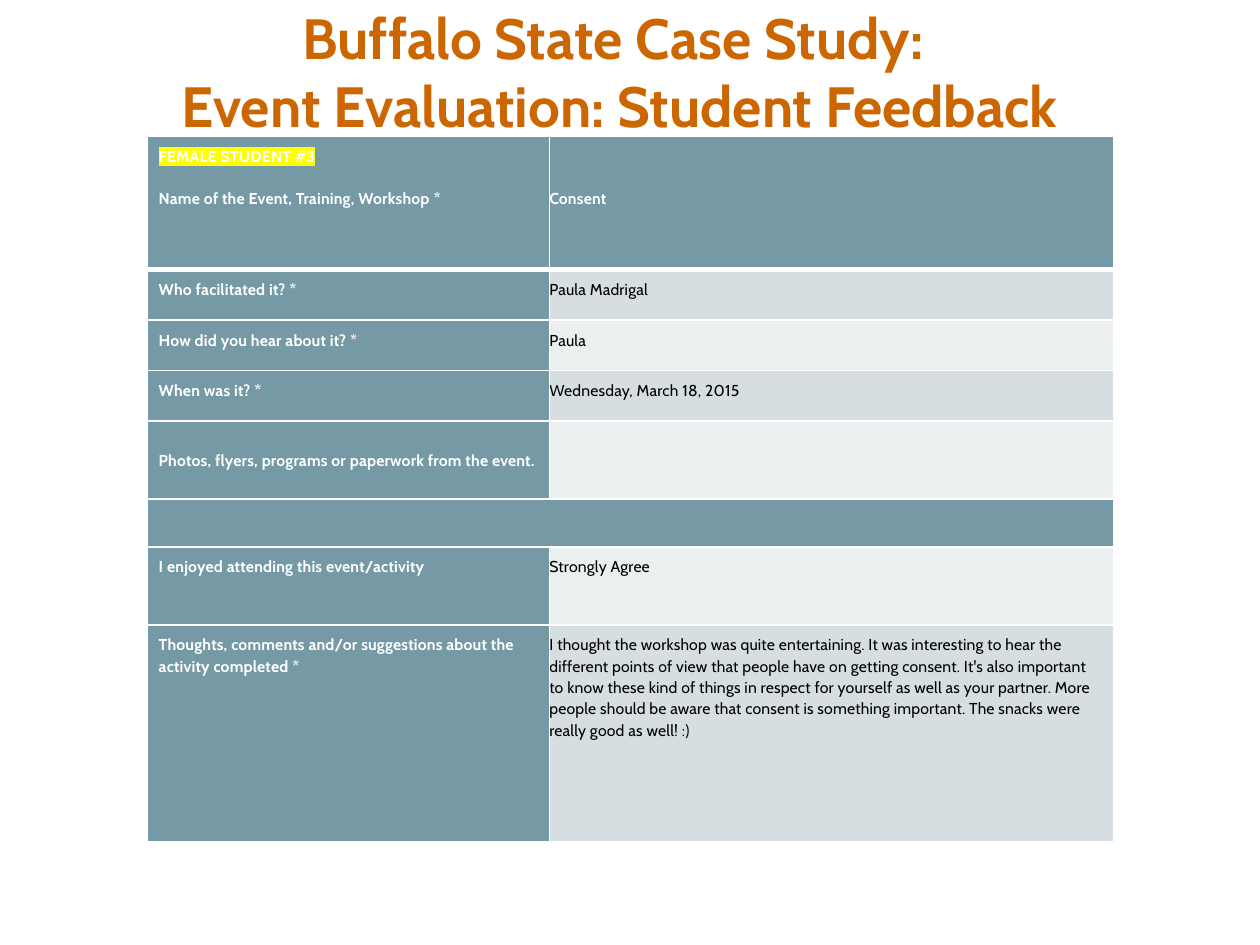
from lxml import etree
from pptx import Presentation
from pptx import util as u
from pptx.dml.color import RGBColor
from pptx.enum import text
from pptx.oxml import ns

COLORS = {
    "title": "CC6600",
    "label": "759AA5",
    "odd": "D6DEE1",
    "even": "ECEFF0",
    "white": "FFFFFF",
    "answer": "000000",
    "marker": "FFFF00",
}
FONT = "Cabin"
LINE = 12.2
HEADING = "Buffalo State Case Study: \vEvent Evaluation: Student Feedback"
COLUMN_WIDTHS = [3.19, 4.48]
FEEDBACK = [
    (1.06, "FEMALE STUDENT #3\nName of the Event, Training, Workshop\u00a0*", "Consent"),
    (0.4, "Who facilitated it?\u00a0*", "Paula Madrigal"),
    (0.4, "How did you hear about it?\u00a0*", "Paula"),
    (0.4, "When was it?\u00a0*", "Wednesday, March 18, 2015"),
    (0.62, "Photos, flyers, programs or paperwork from the event.", ""),
    (0.38, "", ""),
    (0.62, "I enjoyed attending this event/activity", "Strongly Agree"),
    (1.72, "Thoughts, comments and/or suggestions about the activity completed\u00a0*",
     "I thought the workshop was quite entertaining. It was interesting to hear the "
     "different points of view that people have on getting consent. It's also important "
     "to know these kind of things in respect for yourself as well as your partner. More "
     "people should be aware that consent is something important. The snacks were really "
     "good as well! :)"),
]
PHOTOS_ROW, DIVIDER_ROW = 4, 5


def rgb(name):
    return RGBColor.from_string(COLORS[name])


def format_run(run, size, color, bold):
    run.font.name = FONT
    run.font.size = u.Pt(size)
    run.font.bold = bold
    run.font.color.rgb = rgb(color)


def highlight(run):
    marker = etree.Element(ns.qn("a:highlight"))
    etree.SubElement(marker, ns.qn("a:srgbClr"), val=COLORS["marker"])
    run.font._element.find(ns.qn("a:solidFill")).addnext(marker)


def set_borders(cell, top, bottom):
    properties = cell._tc.get_or_add_tcPr()
    widths = {"a:lnL": 1, "a:lnR": 1, "a:lnT": top, "a:lnB": bottom}
    for position, (side, width) in enumerate(widths.items()):
        border = etree.Element(ns.qn(side), w=str(u.Pt(width)))
        fill = etree.SubElement(border, ns.qn("a:solidFill"))
        etree.SubElement(fill, ns.qn("a:srgbClr"), val=COLORS["white"])
        properties.insert(position, border)


def fill_cell(cell, content, background, color, bold, left):
    cell.fill.solid()
    cell.fill.fore_color.rgb = rgb(background)
    cell.margin_left = u.Inches(left)
    cell.margin_right = u.Inches(0.09)
    cell.margin_top = cell.margin_bottom = u.Inches(0.07 if content else 0)
    cell.text_frame.text = content
    for paragraph in cell.text_frame.paragraphs:
        paragraph.line_spacing = u.Pt(LINE)
        for run in paragraph.runs:
            format_run(run, 9, color, bold)
            run.font._element.set("spc", "10")


def add_title(slide, left, top, width, height):
    title = slide.shapes.title
    title.left, title.top = u.Inches(left), u.Inches(top)
    title.width, title.height = u.Inches(width), u.Inches(height)
    frame = title.text_frame
    frame.text = HEADING
    frame.word_wrap = True
    frame.auto_size = text.MSO_AUTO_SIZE.NONE
    frame.vertical_anchor = text.MSO_ANCHOR.MIDDLE
    frame.paragraphs[0].alignment = text.PP_ALIGN.CENTER
    for run in frame.paragraphs[0].runs:
        format_run(run, 32.4, "title", True)


def add_feedback(slide, left, top, width, height):
    table = slide.shapes.add_table(
        len(FEEDBACK), len(COLUMN_WIDTHS),
        u.Inches(left), u.Inches(top), u.Inches(width), u.Inches(height)).table
    for column, column_width in zip(table.columns, COLUMN_WIDTHS):
        column.width = u.Inches(column_width)

    for index, (row_height, question, answer) in enumerate(FEEDBACK):
        table.rows[index].height = u.Inches(row_height)
        question_cell, answer_cell = table.cell(index, 0), table.cell(index, 1)
        heading = index == 0
        band = "label" if heading else "odd" if index % 2 else "even"
        fill_cell(question_cell, question, "label", "white", True, 0.09)
        fill_cell(answer_cell, answer, band, "white" if heading else "answer", heading, 0)
        for cell in (question_cell, answer_cell):
            set_borders(cell, 3 if index == 1 else 1, 3 if heading else 1)

    student, event = table.cell(0, 0).text_frame.paragraphs
    highlight(student.runs[0])
    event.space_before = u.Pt(LINE)
    table.cell(0, 1).margin_top = u.Inches(0.07) + u.Pt(2 * LINE)
    table.cell(PHOTOS_ROW, 0).vertical_anchor = text.MSO_ANCHOR.MIDDLE
    table.cell(DIVIDER_ROW, 0).merge(table.cell(DIVIDER_ROW, 1))


def main():
    deck = Presentation()
    deck.slide_width, deck.slide_height = u.Inches(10), u.Inches(7.5)
    slide = deck.slides.add_slide(deck.slide_layouts.get_by_name("Title Only"))
    add_title(slide, 0.25, 0.04, 9.33, 1.04)
    add_feedback(slide, 1.17, 1.08, 7.67, 5.58)
    deck.save("out.pptx")


if __name__ == "__main__":
    main()
